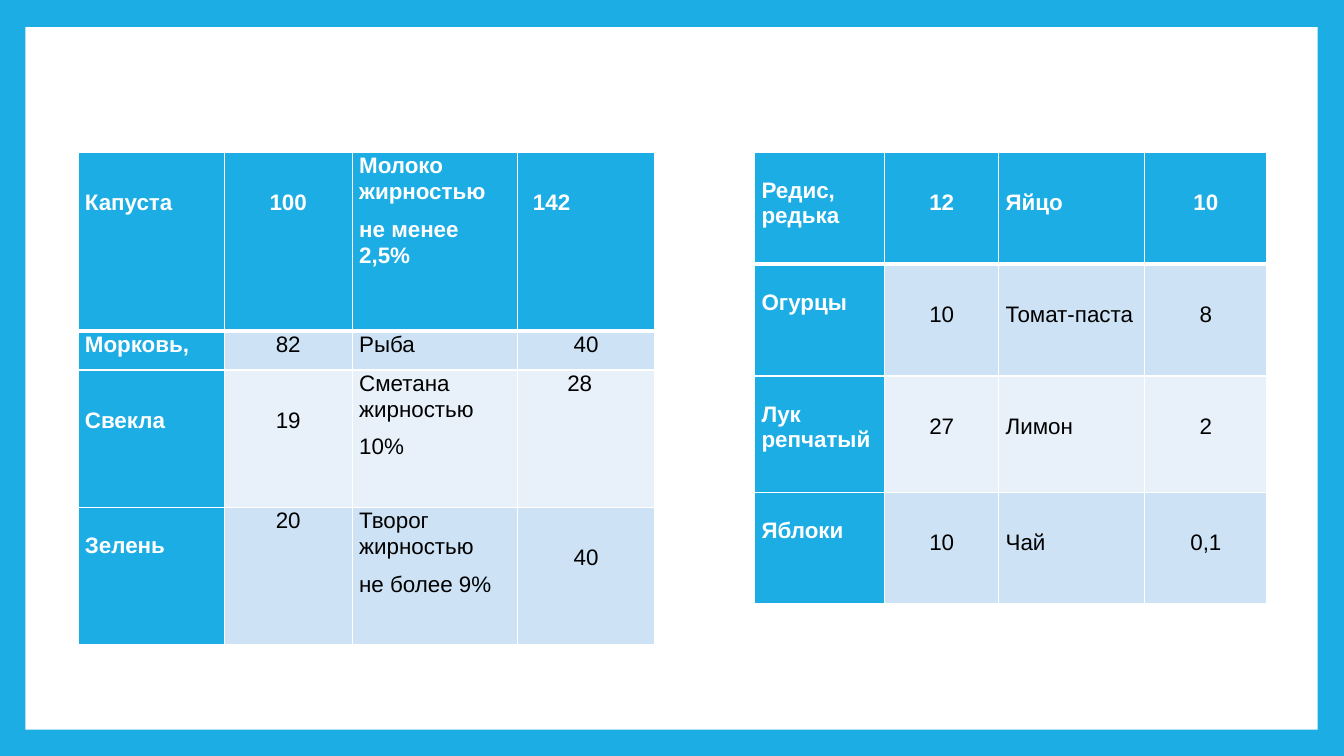
from dataclasses import dataclass

from lxml import etree
from pptx import Presentation, util as u
from pptx.dml.color import RGBColor
from pptx.enum import shapes, text
from pptx.oxml.ns import qn


@dataclass(frozen=True)
class Theme:
    accent: str = "1CADE4"
    light: str = "FFFFFF"
    dark: str = "000000"
    bands: tuple = ("E8F1FA", "CDE3F5")
    font: str = "Arial"
    size: float = 16
    leading: float = 1.05
    after: float = 8
    side: float = 5       # cell side margin, points
    rule: float = 1       # cell border, points
    header_rule: float = 3


@dataclass(frozen=True)
class Entry:
    """Cell text; drop, left and right are extra margins in points."""
    text: str
    drop: float = 0
    left: float = 0
    right: float = 0
    tight: bool = False
    centred: bool = True


def lowered(words, **options):
    return Entry(words, drop=26.5, **options)


def tight(words):
    return Entry(words, drop=18.5, tight=True)


class SlideBuilder:
    """Lengths are percentages of the slide's width and height."""

    def __init__(self, presentation, theme):
        self.presentation = presentation
        self.theme = theme
        self.slide = presentation.slides.add_slide(presentation.slide_layouts[6])

    def across(self, share):
        return u.Emu(round(self.presentation.slide_width * share / 100))

    def down(self, share):
        return u.Emu(round(self.presentation.slide_height * share / 100))

    def paint(self, fill, colour):
        fill.solid()
        fill.fore_color.rgb = RGBColor.from_string(colour)

    def background(self):
        self.paint(self.slide.background.fill, self.theme.accent)

    def panel(self, left, top, width, height):
        shape = self.slide.shapes.add_shape(
            shapes.MSO_SHAPE.RECTANGLE, self.across(left), self.down(top),
            self.across(width), self.down(height))
        shape.shadow.inherit = False
        self.paint(shape.fill, self.theme.light)
        shape.line.fill.background()

    def table(self, left, top, columns, rows, entries):
        table = self.slide.shapes.add_table(
            len(rows), len(columns), self.across(left), self.down(top),
            self.across(sum(columns)), self.down(sum(rows))).table
        table.first_col = True
        for column, width in zip(table.columns, columns):
            column.width = self.across(width)
        for row, height in zip(table.rows, rows):
            row.height = self.down(height)
        for i, line in enumerate(entries):
            for j, entry in enumerate(line):
                self.cell(table.cell(i, j), entry, i, j)

    def cell(self, cell, entry, row, column):
        theme = self.theme
        if isinstance(entry, str):
            entry = Entry(entry)
        heading = row == 0 or column == 0
        cell.margin_left = u.Pt(theme.side + entry.left)
        cell.margin_right = u.Pt(theme.side + entry.right)
        cell.margin_top = u.Pt(entry.drop)
        cell.margin_bottom = 0
        cell.text = entry.text
        for paragraph in cell.text_frame.paragraphs:
            centred = entry.centred and column % 2 == 1
            paragraph.alignment = text.PP_ALIGN.CENTER if centred else text.PP_ALIGN.LEFT
            if not entry.tight:
                paragraph.line_spacing = theme.leading
                paragraph.space_after = u.Pt(theme.after)
            font = paragraph.font
            font.name, font.size, font.bold = theme.font, u.Pt(theme.size), heading
            font.color.rgb = RGBColor.from_string(theme.light if heading else theme.dark)
        self.borders(cell, row)
        self.paint(cell.fill, theme.accent if heading else theme.bands[row % 2])

    def borders(self, cell, row):
        theme = self.theme
        properties = cell._tc.get_or_add_tcPr()
        for side in ("lnL", "lnR", "lnT", "lnB"):
            under_header = (row, side) in ((0, "lnB"), (1, "lnT"))
            width = theme.header_rule if under_header else theme.rule
            line = etree.SubElement(properties, qn(f"a:{side}"), w=str(u.Pt(width)))
            fill = etree.SubElement(line, qn("a:solidFill"))
            etree.SubElement(fill, qn("a:srgbClr"), val=theme.light)


def main():
    presentation = Presentation()
    presentation.slide_width = u.Inches(13.33)
    presentation.slide_height = u.Inches(7.5)
    builder = SlideBuilder(presentation, Theme())

    # Frame
    builder.background()
    builder.panel(1.88, 3.6, 96.15, 92.93)

    # Vegetables and dairy
    table_top = 20.15
    builder.table(5.8, table_top, [10.88, 9.53, 12.3, 10.2], [23.6, 5.2, 18.15, 18.15], [
        [lowered("Капуста"), lowered("100"), "Молоко жирностью\nне менее 2,5%",
         lowered("142", left=6, centred=False)],
        ["Морковь,", "82", "Рыба", "40"],
        [lowered("Свекла"), lowered("19"), "Сметана жирностью\n10%", Entry("28", right=9)],
        [tight("Зелень"), "20", "Творог жирностью\nне более 9%", lowered("40")],
    ])

    # Other products
    products = [
        ("Редис, редька", "12", "Яйцо", "10"),
        ("Огурцы", "10", "Томат-паста", "8"),
        ("Лук репчатый", "27", "Лимон", "2"),
        ("Яблоки", "10", "Чай", "0,1"),
    ]
    builder.table(56.15, table_top, [9.68, 8.48, 10.88, 9.08], [14.8, 14.8, 15.35, 14.8],
                  [[tight(name), *map(lowered, others)] for name, *others in products])

    presentation.save("out.pptx")


if __name__ == "__main__":
    main()
